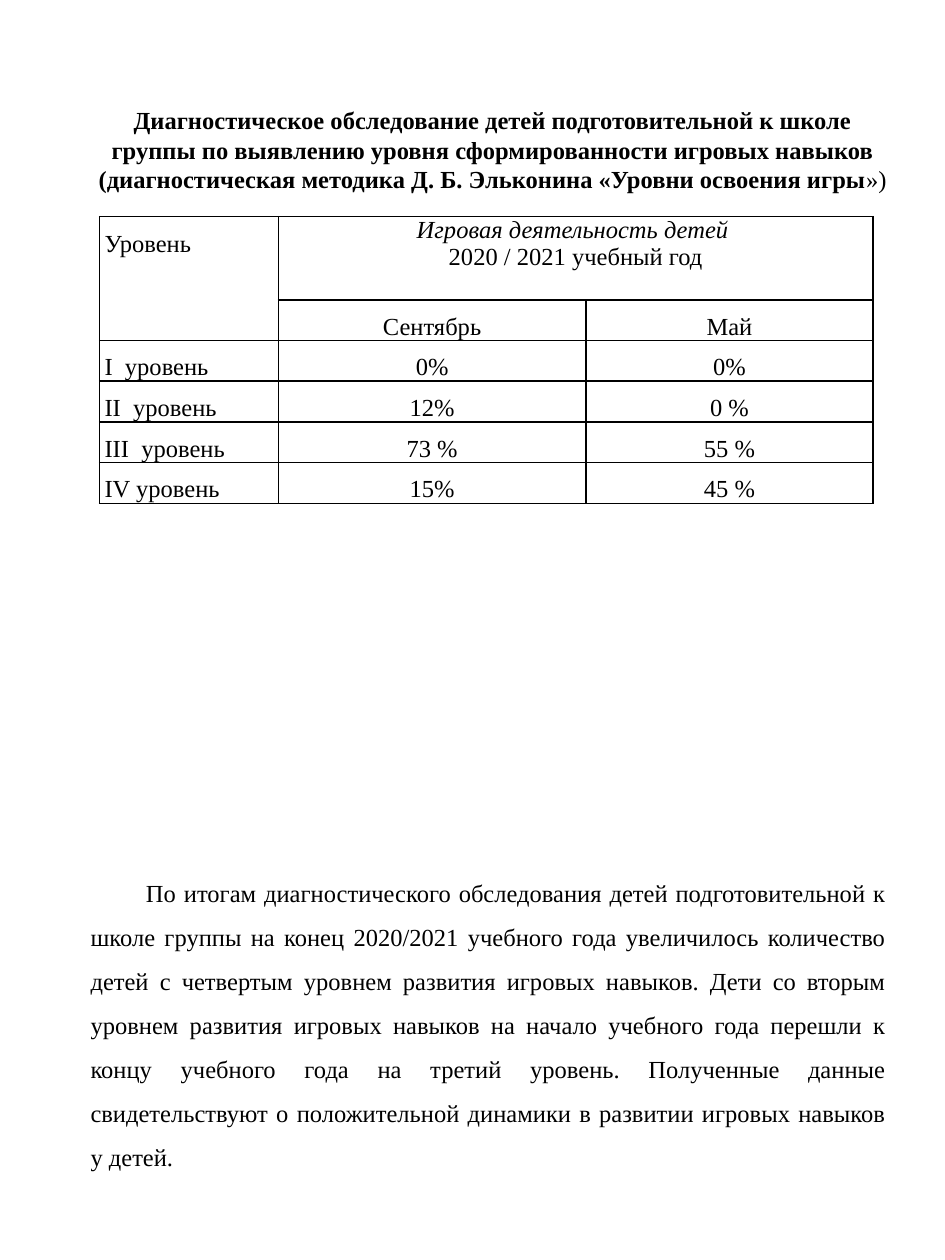
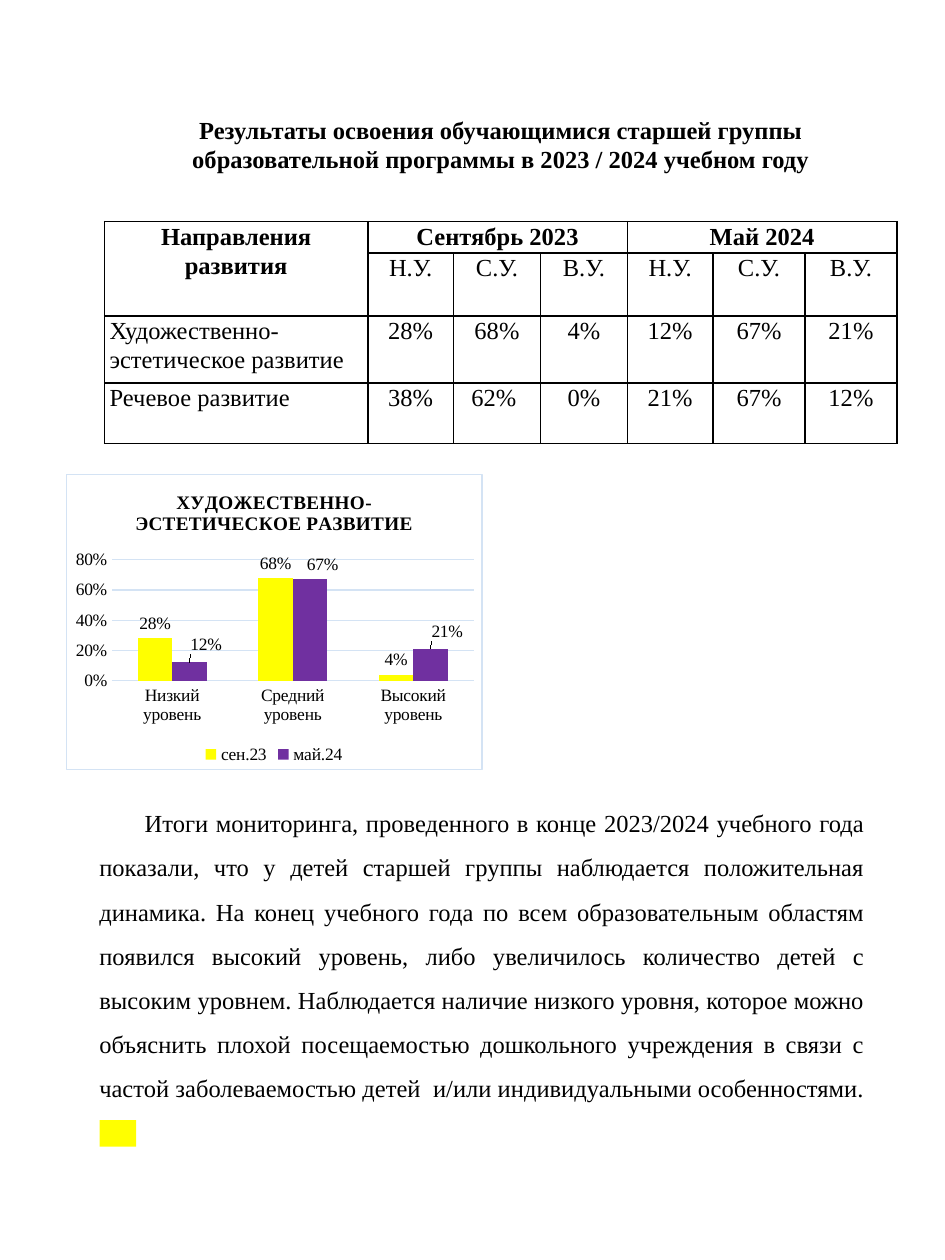
from lxml import etree
from pptx import Presentation
from pptx.chart.data import CategoryChartData
from pptx.dml.color import RGBColor
from pptx.enum.chart import XL_CHART_TYPE, XL_LABEL_POSITION, XL_LEGEND_POSITION, XL_TICK_MARK
from pptx.enum.shapes import MSO_SHAPE
from pptx.enum.text import MSO_ANCHOR, PP_ALIGN
from pptx.oxml import parse_xml
from pptx.oxml.ns import nsdecls, qn
from pptx.util import Inches, Pt

LEFT, CENTER, JUSTIFY = PP_ALIGN.LEFT, PP_ALIGN.CENTER, PP_ALIGN.JUSTIFY
MIDDLE = MSO_ANCHOR.MIDDLE
COLUMNS = XL_CHART_TYPE.COLUMN_CLUSTERED
OUTSIDE = XL_LABEL_POSITION.OUTSIDE_END
BOTTOM = XL_LEGEND_POSITION.BOTTOM
NO_TICK = XL_TICK_MARK.NONE
RECTANGLE = MSO_SHAPE.RECTANGLE

FONT = "Times New Roman"
BLACK, WHITE, YELLOW, PURPLE, PALE = "000000", "FFFFFF", "FFFF00", "7030A0", "D4E3F4"
color = RGBColor.from_string


def write(para, text, align, spacing=1.0, bold=False, italic=False):
    para.alignment = align
    para.line_spacing = spacing
    span = para.add_run()
    span.text = text
    span.font.name = FONT
    span.font.size = Pt(14)
    span.font.bold = bold
    span.font.italic = italic
    span.font.color.rgb = color(BLACK)


def manual_layout(**values):
    layout = parse_xml(f"<c:layout {nsdecls('c')}><c:manualLayout/></c:layout>")
    for tag, value in values.items():
        etree.SubElement(layout[0], qn(f"c:{tag}")).set("val", str(value))
    return layout


sheets = [
    {
        "title": ["Диагностическое обследование детей подготовительной к школе группы по выявлению уровня "
                  "сформированности игровых навыков (диагностическая методика Д. Б. Эльконина «Уровни освоения игры",
                  "»)"],
        "title_box": (0.62, 0.78, 6.58, 0.81),
        "table_at": (0.79, 1.72),
        "columns": [1.42, 2.44, 2.28],
        "rows": [0.66] + [0.32] * 5,
        "spacing": 1.5,
        "merges": [(0, 0, 1, 0), (0, 1, 0, 2)],
        "cells": [
            ["Уровень", "Игровая деятельность детей \n2020 / 2021 учебный год", ""],
            ["", "Сентябрь", "Май"],
            ["I  уровень", "0%", "0%"],
            ["II  уровень", "12%", "0 %"],
            ["III  уровень", "73 %", "55 %"],
            ["IV уровень", "15%", "45 %"],
        ],
        "bold_header": False,
        "summary": "По итогам диагностического обследования детей подготовительной к школе группы на конец "
                   "2020/2021 учебного года увеличилось количество детей с четвертым уровнем развития игровых "
                   "навыков. Дети со вторым уровнем развития игровых навыков на начало учебного года перешли к "
                   "концу учебного года на третий уровень. Полученные данные свидетельствуют о положительной "
                   "динамики в развитии игровых навыков у детей.",
        "summary_box": (0.62, 6.8, 6.51, 2.53),
        "indent": 0.44,
    },
    {
        "title": ["Результаты освоения обучающимися старшей группы образовательной программы "
                  "в 2023 / 2024 учебном году"],
        "title_box": (1.02, 0.86, 5.91, 0.57),
        "table_at": (0.83, 1.76),
        "columns": [2.09, 0.68, 0.69, 0.69, 0.68, 0.73, 0.73],
        "rows": [0.24, 0.46, 0.53, 0.48],
        "spacing": 1.07,
        "merges": [(0, 0, 1, 0), (0, 1, 0, 3), (0, 4, 0, 6)],
        "cells": [
            ["Направления развития", "Сентябрь 2023", "", "", "Май 2024", "", ""],
            [""] + ["Н.У.", "С.У.", "В.У."] * 2,
            ["Художественно- эстетическое развитие", "28%", "68%", "4%", "12%", "67%", "21%"],
            ["Речевое развитие", "38%", "62% ", "0%", "21%", "67%", "12%"],
        ],
        "bold_header": True,
        "summary": "Итоги мониторинга, проведенного в конце 2023/2024 учебного года показали, что у детей старшей "
                   "группы наблюдается положительная динамика. На конец учебного года по всем образовательным "
                   "областям появился высокий уровень, либо увеличилось количество детей с высоким уровнем. "
                   "Наблюдается наличие низкого уровня, которое можно объяснить плохой посещаемостью дошкольного "
                   "учреждения в связи с частой заболеваемостью детей  и/или индивидуальными особенностями. ",
        "summary_box": (0.69, 6.25, 6.27, 2.93),
        "indent": 0.36,
    },
]

deck = Presentation()
deck.slide_width, deck.slide_height = Inches(7.5), Inches(10)

for sheet in sheets:
    page = deck.slides.add_slide(deck.slide_layouts[6])

    widths, heights = sheet["columns"], sheet["rows"]
    left, top = sheet["table_at"]
    table = page.shapes.add_table(len(heights), len(widths), Inches(left), Inches(top),
                                  Inches(sum(widths)), Inches(sum(heights))).table
    table.first_row = table.horz_banding = False
    for column, width in zip(table.columns, widths):
        column.width = Inches(width)
    for row, height in zip(table.rows, heights):
        row.height = Inches(height)
    for r1, c1, r2, c2 in sheet["merges"]:
        table.cell(r1, c1).merge(table.cell(r2, c2))

    for r, texts in enumerate(sheet["cells"]):
        for c, text in enumerate(texts):
            cell = table.cell(r, c)
            cell.margin_left = cell.margin_right = Inches(0.04)
            cell.margin_top = cell.margin_bottom = 0
            cell.fill.background()
            for position, side in enumerate("LRTB"):
                border = parse_xml(
                    f'<a:ln{side} {nsdecls("a")} w="12700"><a:solidFill>'
                    f'<a:srgbClr val="{BLACK}"/></a:solidFill></a:ln{side}>')
                cell._tc.tcPr.insert(position, border)
            if not text:
                continue
            bold = sheet["bold_header"] and r == 0
            align = CENTER if c or bold else LEFT
            lines = text.split("\n")
            spacing = 1.0 if len(lines) > 1 else sheet["spacing"]
            for i, line in enumerate(lines):
                para = cell.text_frame.add_paragraph() if i else cell.text_frame.paragraphs[0]
                write(para, line, align, spacing, bold, italic=i < len(lines) - 1)

    title = page.shapes.add_textbox(*map(Inches, sheet["title_box"])).text_frame
    title.word_wrap = True
    title.vertical_anchor = MIDDLE
    for i, part in enumerate(sheet["title"]):
        write(title.paragraphs[0], part, CENTER, bold=i == 0)

    summary = page.shapes.add_textbox(*map(Inches, sheet["summary_box"])).text_frame
    summary.word_wrap = True
    write(summary.paragraphs[0], sheet["summary"], JUSTIFY, 1.5)
    summary.paragraphs[0]._p.get_or_add_pPr().set("indent", str(Inches(sheet["indent"])))

marker = page.shapes.add_shape(RECTANGLE, Inches(0.79), Inches(8.89), Inches(0.29), Inches(0.21))
marker.shadow.inherit = False
marker.fill.solid()
marker.fill.fore_color.rgb = color(YELLOW)
marker.line.fill.background()

data = CategoryChartData(number_format="0%")
data.categories = ["Низкий уровень", "Средний уровень", "Высокий уровень"]
data.add_series("сен.23", [0.28, 0.68, 0.04])
data.add_series("май.24", [0.12, 0.67, 0.21])
chart = page.shapes.add_chart(COLUMNS, Inches(0.52), Inches(3.76), Inches(3.31), Inches(2.35), data).chart
chart.font.name = FONT
chart.font.size = Pt(10)
chart.font.color.rgb = color(BLACK)
chart._chartSpace.find(qn("c:chart")).addnext(parse_xml(
    f'<c:spPr {nsdecls("c", "a")}><a:solidFill><a:srgbClr val="{WHITE}"/></a:solidFill>'
    f'<a:ln w="9525"><a:solidFill><a:srgbClr val="{PALE}"/></a:solidFill></a:ln></c:spPr>'))

chart.has_title = True
heading = chart.chart_title.text_frame.paragraphs[0].add_run()
heading.text = "ХУДОЖЕСТВЕННО-ЭСТЕТИЧЕСКОЕ РАЗВИТИЕ"
heading.font.name = FONT
heading.font.size = Pt(11)
heading.font.bold = True
heading.font.color.rgb = color(BLACK)
chart.chart_title.include_in_layout = False

chart.has_legend = True
chart.legend.position = BOTTOM
chart.legend.include_in_layout = False

levels, shares = chart.category_axis, chart.value_axis
levels.major_tick_mark = shares.major_tick_mark = NO_TICK
shares.minimum_scale, shares.maximum_scale, shares.major_unit = 0, 0.8, 0.2
shares.tick_labels.number_format = "0%"
shares.tick_labels.number_format_is_linked = False
shares.format.line.fill.background()
for line in (levels.format.line, shares.major_gridlines.format.line):
    line.color.rgb = color(PALE)
    line.width = Pt(0.75)

plot = chart.plots[0]
plot.gap_width = 150
plot.overlap = 0
plot.vary_by_categories = False
plot_area = chart._chartSpace.find(f".//{qn('c:plotArea')}")
for automatic in plot_area.findall(qn("c:layout")):
    plot_area.remove(automatic)
plot_area.insert(0, manual_layout(layoutTarget="inner", xMode="edge", yMode="edge", x=0.11, y=0.29, w=0.87, h=0.41))

for series, fill in zip(plot.series, (YELLOW, PURPLE)):
    series.format.fill.solid()
    series.format.fill.fore_color.rgb = color(fill)
    labels = series.data_labels
    labels.show_value = True
    labels.number_format = "0%"
    labels.number_format_is_linked = False
    labels.position = OUTSIDE

may = plot.series[1]
for i, (x, y) in enumerate([(0.04, -0.01), (0.03, 0), (0.04, -0.01)]):
    label = may.points[i].data_label
    label.position = OUTSIDE
    label.font.name = FONT
    label.font.size = Pt(10)
    label.font.color.rgb = color(BLACK)
for label, (x, y) in zip(may._element.iter(qn("c:dLbl")), [(0.04, -0.01), (0.03, 0), (0.04, -0.01)]):
    label.find(qn("c:idx")).addnext(manual_layout(x=x, y=y))

deck.save("out.pptx")
